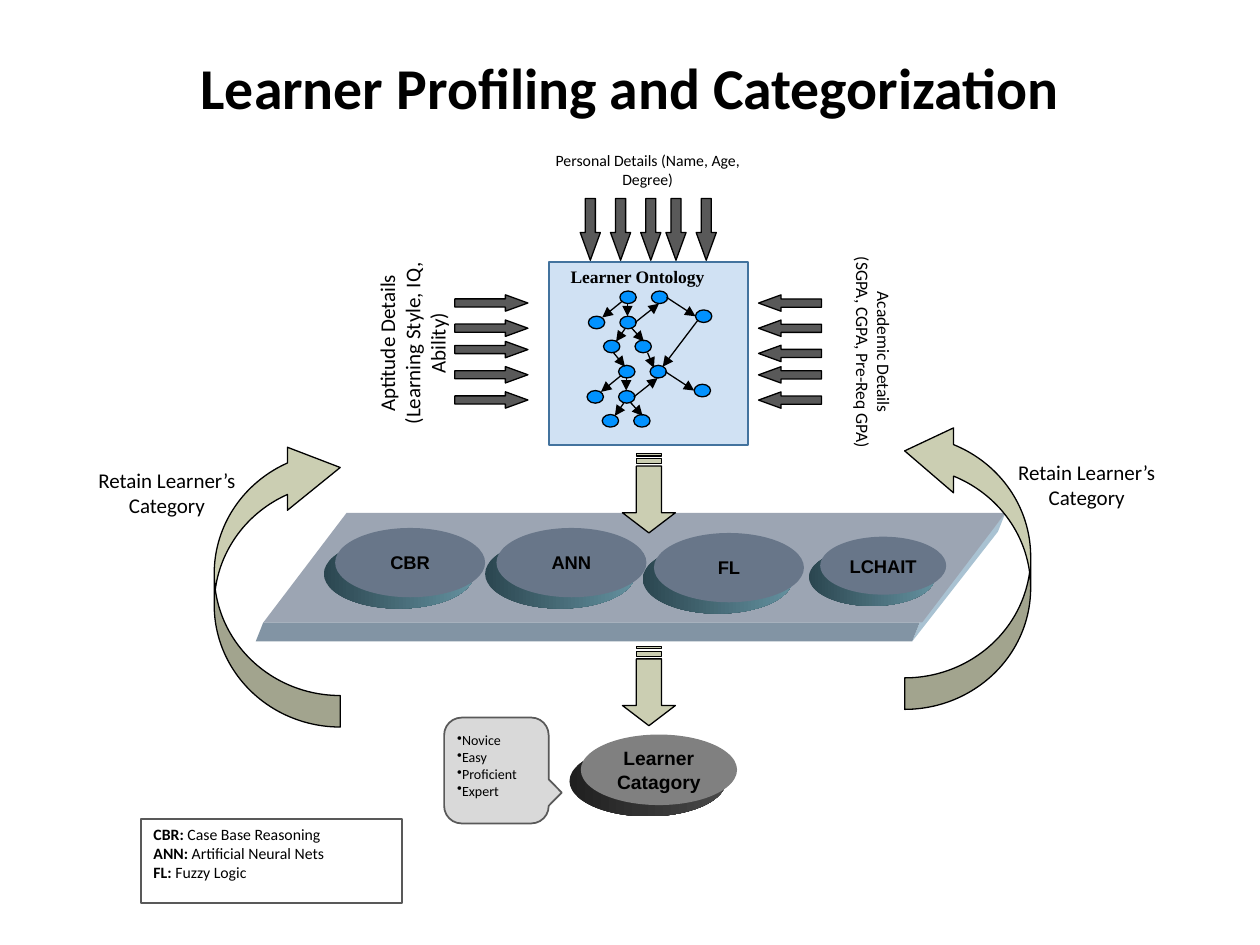
import pptx
import pptx.util
import pptx.dml.color
import pptx.enum.shapes
import pptx.enum.text
import pptx.oxml
import pptx.oxml.ns
import pptx.oxml.xmlchemy

Inches = pptx.util.Inches
SHAPE = pptx.enum.shapes.MSO_SHAPE
ALIGN = pptx.enum.text.PP_ALIGN
ANCHOR = pptx.enum.text.MSO_ANCHOR

THEME = {
    "ink": "000000", "panel": "D0E1F3", "panel_line": "43739E", "node": "0192FF",
    "input": "595959", "flow": "CBCEB2", "note": "D9D9D9", "frame": "595959",
    "plate": "9CA5B3", "plate_front": "8294A4", "plate_side": "A9C2D2",
    "disk": "687689", "disk_side": ("2B4650", "64919F"),
    "result": "808080", "result_side": ("202020", "484848"),
    "body": "Calibri", "disk_font": "Arial", "panel_font": "Times New Roman",
    "title_size": 33, "label": 12, "result_size": 11, "disk_size": 10.5,
    "small_label": 10, "caption": 9, "note_size": 8, "thin": 0.75,
}

TITLE = "Learner Profiling and Categorization"
# text, box (left, top, width, height), size, rotation
LABELS = [
    (["Personal Details (Name, Age, Degree)"], (4.27, 1.15, 1.74, 0.49), "caption", 0),
    (["Academic Details", "(SGPA, CGPA, Pre-Req GPA)"], (5.97, 2.49, 1.75, 0.61), "small_label", 90),
    (["Aptitude Details", "(Learning Style, IQ, Ability)"], (2.4, 2.37, 1.75, 0.71), "label", 270),
    (["Retain Learner’s Category"], (7.92, 3.6, 1.41, 0.61), "label", 0),
    (["Retain Learner’s Category"], (0.62, 3.66, 1.41, 0.61), "label", 0),
]
LEVELS = ["Novice", "Easy", "Proficient", "Expert"]
LEGEND = [("CBR:", " Case Base Reasoning"), ("ANN:", " Artificial Neural Nets"), ("FL:", " Fuzzy Logic")]
METHODS = [
    ("CBR", (2.66, 4.19, 1.19, 0.55)), ("ANN", (3.94, 4.19, 1.19, 0.55)),
    ("FL", (5.19, 4.23, 1.19, 0.55)), ("LCHAIT", (6.51, 4.26, 1, 0.46)),
]

# The ontology graph is one cluster drawn twice, plus the edges between them
CLUSTER_OFFSETS = [(0, 0), (-0.01, 0.59)]
NODES = [(4.67, 2.51), (4.92, 2.51), (4.79, 2.7), (4.92, 2.31), (5.04, 2.7), (5.17, 2.31), (5.52, 2.46)]
EDGES = [
    (4.94, 2.39, 4.78, 2.52), (4.98, 2.41, 4.98, 2.51), (4.96, 2.61, 4.89, 2.71),
    (5.01, 2.6, 5.11, 2.71), (5.04, 2.56, 5.23, 2.41), (5.29, 2.36, 5.52, 2.51),
]
BRIDGES = [(4.87, 2.8, 4.96, 2.91), (5.54, 2.54, 5.26, 2.91), (5.14, 2.8, 5.19, 2.92)]

INPUT_ARROWS = (
    [((6.02, top, 0.5, 0.13), 180) for top in (2.34, 2.54, 2.74, 2.91, 3.11)]
    + [((3.61, top, 0.58, 0.13), 0) for top in (2.34, 2.54, 2.71, 2.91, 3.11)]
    + [((left, 1.74, 0.49, 0.16), 90) for left in (4.44, 4.68, 4.92, 5.12, 5.36)]
)
RETAIN_ARROWS = [
    (SHAPE.CURVED_RIGHT_ARROW, (7.18, 3.32, 1, 2.31), (0.25, 0.516, 0.388)),
    (SHAPE.CURVED_LEFT_ARROW, (1.7, 3.46, 1, 2.31), (0.25, 0.5, 0.419)),
]
FLOW_TOPS = [3.6, 5.13]
FLOW_CENTER = 5.15
PLATE = [(2.75, 4.07), (7.98, 4.07), (7.3, 4.94), (2.09, 4.94)]
PLATE_DEPTH = (-0.06, 0.15)
DISK_DEPTH = 0.09

deck = pptx.Presentation()
deck.slide_width, deck.slide_height = Inches(10), Inches(7.5)
page = deck.slides.add_slide(deck.slide_layouts[6])


def color(name):
    return pptx.dml.color.RGBColor.from_string(THEME.get(name, name))


def paint(shape, fill=None, line=None, width=THEME["thin"]):
    shape.shadow.inherit = False
    if isinstance(fill, tuple):
        shape.fill.gradient()
        shape.fill.gradient_angle = 0
        for stop, tone in zip(shape.fill.gradient_stops, fill):
            stop.color.rgb = color(tone)
    elif fill:
        shape.fill.solid()
        shape.fill.fore_color.rgb = color(fill)
    else:
        shape.fill.background()
    if line:
        shape.line.color.rgb = color(line)
        shape.line.width = pptx.util.Pt(width)
    else:
        shape.line.fill.background()
    return shape


def add_shape(kind, box, fill=None, line=None, width=THEME["thin"], turn=0, adjust=()):
    shape = page.shapes.add_shape(kind, *map(Inches, box))
    shape.rotation = turn
    for index, value in enumerate(adjust):
        shape.adjustments[index] = value
    return paint(shape, fill, line, width)


def add_outline(contours, fill, line=None):
    """Draw closed contours, in inches; the builder rounds points to whole units, so it gets EMU."""
    builder = None
    for contour in contours:
        first, *rest = [(Inches(x), Inches(y)) for x, y in contour]
        if builder is None:
            builder = page.shapes.build_freeform(*first)
        else:
            builder.move_to(*first)
        builder.add_line_segments(rest, close=True)
    return paint(builder.convert_to_shape(), fill, line)


def write(lines, box=None, shape=None, size="label", font="body", bold=False, align=ALIGN.CENTER,
          anchor=ANCHOR.TOP, turn=0, wrap=True, bullet=None, spacing=None):
    """Fill a shape or a new box; a line may be a (bold, plain) pair."""
    if shape is None:
        shape = page.shapes.add_textbox(*map(Inches, box))
        shape.rotation = turn
    frame = shape.text_frame
    frame.word_wrap = wrap
    frame.vertical_anchor = anchor
    for index, line in enumerate(lines):
        para = frame.add_paragraph() if index else frame.paragraphs[0]
        para.alignment = align
        if spacing:
            para.line_spacing = spacing
        if bullet:
            mark = pptx.oxml.xmlchemy.OxmlElement("a:buChar")
            mark.set("char", bullet)
            para._p.get_or_add_pPr().append(mark)
        spans = [(line, bold)] if isinstance(line, str) else [(line[0], True), (line[1], False)]
        for text, strong in spans:
            span = para.add_run()
            span.text = text
            span.font.name = THEME[font]
            span.font.size = pptx.util.Pt(THEME[size])
            span.font.bold = strong
            span.font.color.rgb = color("ink")


def add_edge(x1, y1, x2, y2):
    edge = page.shapes.add_connector(pptx.enum.shapes.MSO_CONNECTOR.STRAIGHT, *map(Inches, (x1, y1, x2, y2)))
    edge.line.color.rgb = color("ink")
    edge.line.width = pptx.util.Pt(THEME["thin"])
    head = pptx.oxml.xmlchemy.OxmlElement("a:tailEnd")
    head.set("type", "triangle")
    edge.line._get_or_add_ln().append(head)
    edge._element.spPr.append(pptx.oxml.xmlchemy.OxmlElement("a:effectLst"))


def add_disk(lines, box, face, side, size):
    left, top, width, height = box
    add_shape(SHAPE.OVAL, (left - DISK_DEPTH, top + DISK_DEPTH, width, height), THEME[side])
    disk = add_shape(SHAPE.OVAL, box, face)
    write(lines, shape=disk, size=size, font="disk_font", bold=True, anchor=ANCHOR.MIDDLE, wrap=False)


def add_flow_arrow(top):
    """Downward arrow with two stripes above its shaft."""
    left, right = FLOW_CENTER - 0.1, FLOW_CENTER + 0.1
    neck, tip = top + 0.47, top + 0.63
    arrow = [(right, top + 0.1), (right, neck), (right + 0.11, neck), (FLOW_CENTER, tip),
             (left - 0.11, neck), (left, neck), (left, top + 0.1)]
    stripes = [[(left, top + a), (right, top + a), (right, top + b), (left, top + b)]
               for a, b in ((0.04, 0.08), (0, 0.02))]
    add_outline([arrow] + stripes, "flow", "ink")


write([TITLE], (0.5, 0.25, 9, 0.94), size="title_size", bold=True, anchor=ANCHOR.MIDDLE, spacing=0.9)

add_shape(SHAPE.RECTANGLE, (4.36, 2.08, 1.58, 1.45), "panel", "panel_line", 1)
write(["Learner Ontology"], (4.43, 2.06, 1.28, 0.32), size="small_label", font="panel_font",
      bold=True, align=ALIGN.LEFT, wrap=False)
for dx, dy in CLUSTER_OFFSETS:
    for x, y in NODES:
        add_shape(SHAPE.OVAL, (x + dx, y + dy, 0.13, 0.1), "node", "ink")
    for x1, y1, x2, y2 in EDGES:
        add_edge(x1 + dx, y1 + dy, x2 + dx, y2 + dy)
for bridge in BRIDGES:
    add_edge(*bridge)
for box, turn in INPUT_ARROWS:
    add_shape(SHAPE.RIGHT_ARROW, box, "input", "ink", turn=turn, adjust=(0.5, 1.375))

lower = [(x + PLATE_DEPTH[0], y + PLATE_DEPTH[1]) for x, y in PLATE]
add_outline([[PLATE[1], PLATE[2], lower[2], lower[1]]], "plate_side")
add_outline([[PLATE[3], PLATE[2], lower[2], lower[3]]], "plate_front")
add_shape(SHAPE.PARALLELOGRAM, (2.09, 4.07, 5.89, 0.87), "plate", adjust=(0.76,))
for name, box in METHODS:
    add_disk([name], box, "disk", "disk_side", "disk_size")
add_disk(["Learner", "Catagory"], (4.61, 5.83, 1.24, 0.56), "result", "result_side", "result_size")
for top in FLOW_TOPS:
    add_flow_arrow(top)

add_shape(SHAPE.ROUNDED_RECTANGULAR_CALLOUT, (3.52, 5.7, 0.84, 0.83), "note", "frame", 1, turn=270)
write(LEVELS, (3.53, 5.76, 1.24, 0.77), size="note_size", align=ALIGN.LEFT, bullet="•")
for kind, box, adjust in RETAIN_ARROWS:
    add_shape(kind, box, "flow", "ink", turn=180, adjust=adjust)
for lines, box, size, turn in LABELS:
    write(lines, box, size=size, turn=turn)
legend = add_shape(SHAPE.RECTANGLE, (1.12, 6.5, 2.07, 0.67), line="frame", width=1.25)
write(LEGEND, shape=legend, size="caption", align=ALIGN.LEFT)

deck.save("out.pptx")
